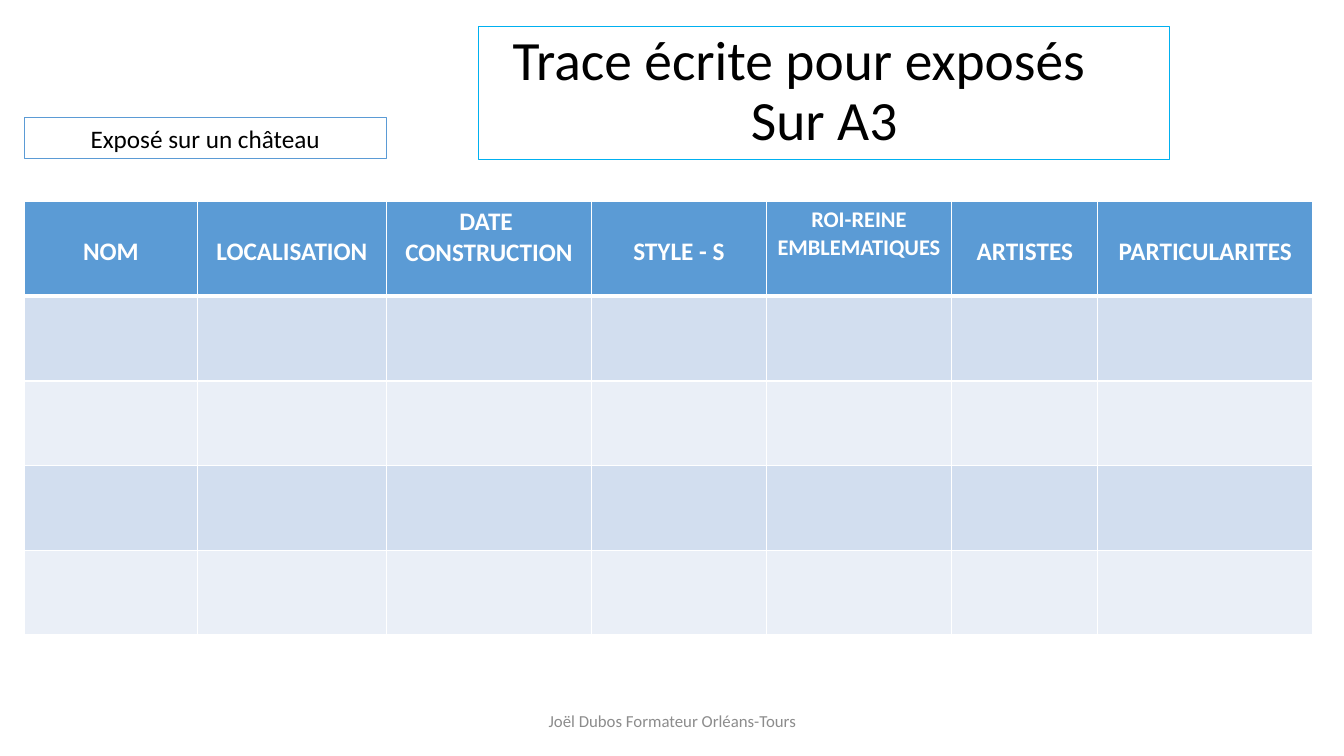
"""Build the worksheet slide for a talk about a castle."""
from dataclasses import dataclass

import lxml.etree
import pptx
import pptx.dml.color
import pptx.enum.text
import pptx.oxml.ns
import pptx.slide
import pptx.table
import pptx.text.text
import pptx.util

EMU_PER_PX = 9144
FONT = "Calibri"
COLOURS = {
    "black": "000000",
    "white": "FFFFFF",
    "grey": "8C8C8C",
    "sky": "00B0F0",
    "blue": "5B9BD5",
    "dark_band": "D2DEEF",
    "light_band": "EAEFF7",
}
TABLE_LEFT, TABLE_TOP = 24, 200
HEADER_HEIGHT, ROW_HEIGHT, BODY_ROWS = 94, 84, 4
CELL_MARGIN, LOWERED_MARGIN = 5, 35


@dataclass(frozen=True)
class Label:
    left: int
    top: int
    width: int
    height: int
    lines: tuple[str, ...]
    size: float
    colour: str = "black"
    outline: str | None = None
    anchor: pptx.enum.text.MSO_ANCHOR = pptx.enum.text.MSO_ANCHOR.MIDDLE
    spacing: float = 1.0
    right_margin: int = 10
    last_indent: int = 0


@dataclass(frozen=True)
class Column:
    width: int
    lines: tuple[str, ...]
    size: int = 18
    top_margin: int = LOWERED_MARGIN


LABELS = (
    Label(475, 26, 685, 132, ("Trace écrite pour exposés", "Sur A3"), 39.6,
          outline="sky", spacing=0.9, right_margin=60, last_indent=50),
    Label(442, 695, 450, 40, ("Joël Dubos Formateur Orléans-Tours",), 12, "grey"),
    Label(24, 117, 359, 40, ("Exposé sur un château",), 18,
          outline="blue", anchor=pptx.enum.text.MSO_ANCHOR.TOP),
)
COLUMNS = (
    Column(172, ("NOM",)),
    Column(187, ("LOCALISATION",)),
    Column(204, ("DATE ", "CONSTRUCTION"), top_margin=CELL_MARGIN),
    Column(173, ("STYLE - S",)),
    Column(184, ("ROI-REINE EMBLEMATIQUES",), 16, CELL_MARGIN),
    Column(145, ("ARTISTES",)),
    Column(213, ("PARTICULARITES",)),
)


def px(length: int) -> pptx.util.Emu:
    return pptx.util.Emu(length * EMU_PER_PX)


def rgb(name: str) -> pptx.dml.color.RGBColor:
    return pptx.dml.color.RGBColor.from_string(COLOURS[name])


def write_lines(frame: pptx.text.text.TextFrame, lines: tuple[str, ...], size: float,
                colour: str, bold: bool = False, spacing: float = 1.0) -> None:
    for index, line in enumerate(lines):
        para = frame.add_paragraph() if index else frame.paragraphs[0]
        para.alignment = pptx.enum.text.PP_ALIGN.CENTER
        para.line_spacing = spacing
        span = para.add_run()
        span.text = line
        span.font.name = FONT
        span.font.size = pptx.util.Pt(size)
        span.font.bold = bold
        span.font.color.rgb = rgb(colour)


def draw_label(page: pptx.slide.Slide, label: Label) -> None:
    box = page.shapes.add_textbox(px(label.left), px(label.top), px(label.width), px(label.height))
    if label.outline:
        box.line.color.rgb = rgb(label.outline)
        box.line.width = pptx.util.Pt(0.75)
    frame = box.text_frame
    frame.word_wrap = True
    frame.vertical_anchor = label.anchor
    frame.margin_right = px(label.right_margin)
    write_lines(frame, label.lines, label.size, label.colour, spacing=label.spacing)
    if label.last_indent:
        properties = frame.paragraphs[-1]._p.get_or_add_pPr()
        properties.set("marL", str(px(label.last_indent)))


def style_cell(cell: pptx.table._Cell, fill: str, bottom_width: int) -> None:
    qn = pptx.oxml.ns.qn
    properties = cell._tc.get_or_add_tcPr()
    for side, width in (("L", 1), ("R", 1), ("T", 1), ("B", bottom_width)):
        border = lxml.etree.SubElement(properties, qn(f"a:ln{side}"), w=str(pptx.util.Pt(width)))
        paint = lxml.etree.SubElement(border, qn("a:solidFill"))
        lxml.etree.SubElement(paint, qn("a:srgbClr"), val=COLOURS["white"])
    cell.fill.solid()
    cell.fill.fore_color.rgb = rgb(fill)


def draw_table(page: pptx.slide.Slide) -> None:
    width = sum(column.width for column in COLUMNS)
    height = HEADER_HEIGHT + BODY_ROWS * ROW_HEIGHT
    table = page.shapes.add_table(BODY_ROWS + 1, len(COLUMNS), px(TABLE_LEFT), px(TABLE_TOP),
                                  px(width), px(height)).table
    table.first_row = False
    table.horz_banding = False
    for index, row in enumerate(table.rows):
        row.height = px(ROW_HEIGHT if index else HEADER_HEIGHT)
        band = "dark_band" if index % 2 else "light_band"
        for cell in row.cells:
            style_cell(cell, band if index else "blue", 1 if index else 3)
    for index, column in enumerate(COLUMNS):
        table.columns[index].width = px(column.width)
        header = table.cell(0, index)
        header.margin_top = px(column.top_margin)
        write_lines(header.text_frame, column.lines, column.size, "white", bold=True)


def main() -> None:
    deck = pptx.Presentation()
    deck.slide_width, deck.slide_height = px(1333), px(750)
    page = deck.slides.add_slide(deck.slide_layouts[6])
    draw_table(page)
    for label in LABELS:
        draw_label(page, label)
    deck.save("out.pptx")


if __name__ == "__main__":
    main()
